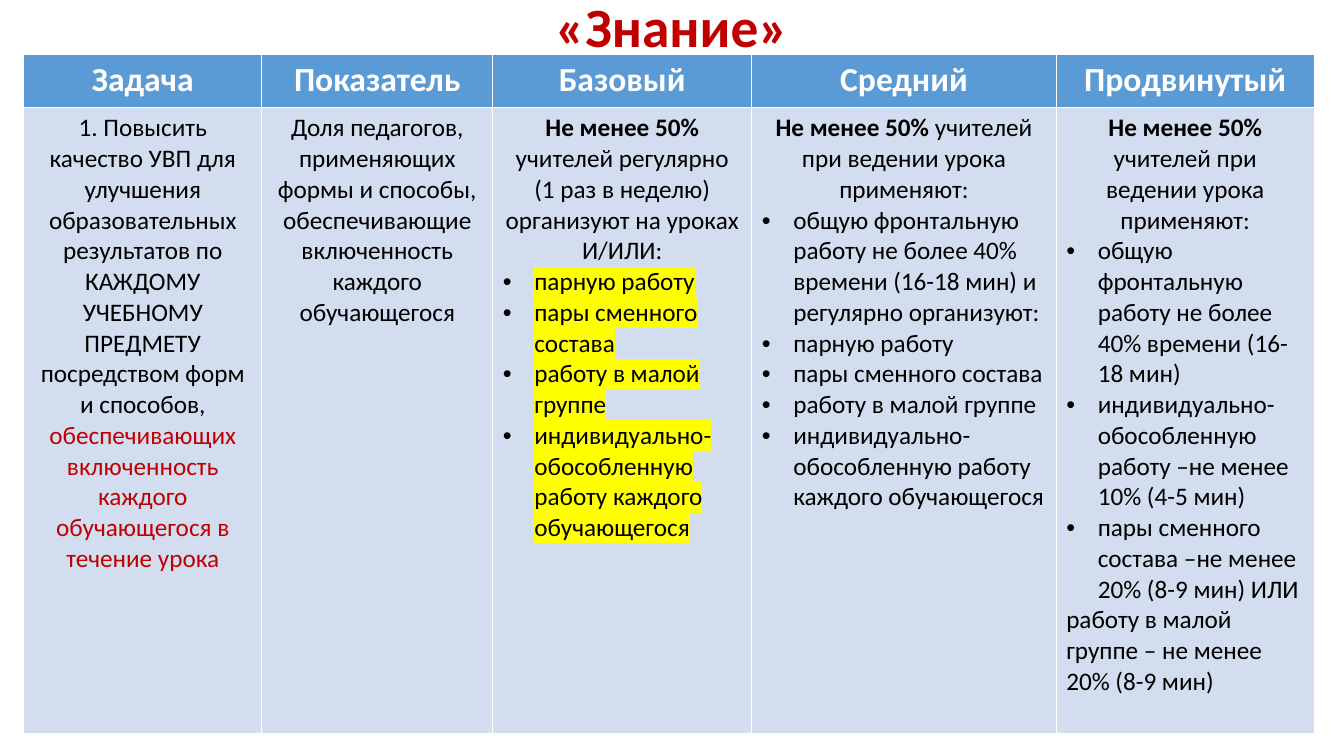
from dataclasses import dataclass

from lxml import etree
from pptx import Presentation
from pptx import util as u
from pptx.dml.color import RGBColor
from pptx.enum import text
from pptx.oxml import ns


@dataclass(frozen=True)
class Theme:
    font: str = "Calibri"
    title_size: float = 39.6
    header_size: float = 24
    body_size: float = 18
    accent: str = "C00000"
    header_text: str = "FFFFFF"
    body_text: str = "000000"
    header_fill: str = "5B9BD5"
    body_fill: str = "D2DEEF"
    marker: str = "FFFF00"
    bullet_indent: float = 22.5


@dataclass(frozen=True)
class Span:
    wording: str
    bold: bool = False
    color: str = ""
    marked: bool = False


@dataclass(frozen=True)
class Line:
    spans: tuple[Span, ...]
    bullet: bool = False
    centred: bool = True


@dataclass(frozen=True)
class Level:
    heading: str
    width: float
    lines: tuple[Line, ...]


THEME = Theme()


def centred(*spans: Span) -> Line:
    return Line(spans)


def bullets(*items: str, marked: bool = False) -> tuple[Line, ...]:
    return tuple(Line((Span(item, marked=marked),), True, False) for item in items)


def share(rest: str) -> Line:
    return centred(Span("Не менее 50% ", bold=True), Span(rest))


FORMS = ("парную работу", "пары сменного состава", "работу в малой группе",
         "индивидуально-обособленную работу каждого обучающегося")
IN_LESSON = share("учителей при ведении урока применяют:")

LEVELS = (
    Level("Задача", 170, (centred(
        Span("1. Повысить качество УВП для улучшения образовательных результатов "
             "по КАЖДОМУ УЧЕБНОМУ ПРЕДМЕТУ посредством форм и способов, "),
        Span("обеспечивающих включенность каждого обучающегося в течение урока",
             color=THEME.accent)),)),
    Level("Показатель", 165, (centred(
        Span("Доля педагогов, применяющих формы и способы, обеспечивающие "
             "включенность каждого обучающегося")),)),
    Level("Базовый", 185, (
        share("учителей регулярно (1 раз в неделю) организуют на уроках"),
        centred(Span("И/ИЛИ:")),
        *bullets(*FORMS, marked=True))),
    Level("Средний", 217.5, (
        IN_LESSON,
        *bullets("общую фронтальную работу не более 40% времени (16-18 мин) "
                 "и регулярно организуют:", *FORMS))),
    Level("Продвинутый", 184.3, (
        IN_LESSON,
        *bullets("общую фронтальную работу не более 40% времени (16-18 мин)",
                 "индивидуально-обособленную работу –не менее 10% (4-5 мин)",
                 "пары сменного состава –не менее 20% (8-9 мин) ИЛИ"),
        Line((Span("работу в малой группе – не менее 20% (8-9 мин)"),), centred=False))),
)


def set_font(font, size: float, color: str, bold: bool | None = None) -> None:
    font.name = THEME.font
    font.size = u.Pt(size)
    font.color.rgb = RGBColor.from_string(color)
    font.bold = bold


def add_bullet(paragraph) -> None:
    properties = paragraph._p.get_or_add_pPr()
    properties.set("marL", str(u.Pt(THEME.bullet_indent)))
    properties.set("indent", str(-u.Pt(THEME.bullet_indent)))
    etree.SubElement(properties, ns.qn("a:buFont")).set("typeface", "Arial")
    etree.SubElement(properties, ns.qn("a:buChar")).set("char", "•")


def add_marker(run) -> None:
    highlight = etree.SubElement(run._r.get_or_add_rPr(), ns.qn("a:highlight"))
    etree.SubElement(highlight, ns.qn("a:srgbClr")).set("val", THEME.marker)


def write_line(paragraph, line: Line, size: float, color: str) -> None:
    paragraph.alignment = text.PP_ALIGN.CENTER if line.centred else text.PP_ALIGN.LEFT
    if line.bullet:
        add_bullet(paragraph)
    set_font(paragraph.font, size, color)
    for span in line.spans:
        run = paragraph.add_run()
        run.text = span.wording
        run.font.bold = span.bold
        if span.color:
            run.font.color.rgb = RGBColor.from_string(span.color)
        if span.marked:
            add_marker(run)


def fill_cell(cell, lines: tuple[Line, ...], fill: str, size: float, color: str) -> None:
    cell.fill.solid()
    cell.fill.fore_color.rgb = RGBColor.from_string(fill)
    frame = cell.text_frame
    for index, line in enumerate(lines):
        paragraph = frame.add_paragraph() if index else frame.paragraphs[0]
        write_line(paragraph, line, size, color)


def add_title(slide, wording: str) -> None:
    frame = slide.shapes.add_textbox(u.Pt(66), u.Pt(5), u.Pt(828), u.Pt(32.4)).text_frame
    frame.word_wrap = True
    frame.vertical_anchor = text.MSO_ANCHOR.MIDDLE
    heading = frame.paragraphs[0]
    heading.line_spacing = 0.9
    write_line(heading, centred(Span(wording, bold=True)), THEME.title_size, THEME.accent)


def add_levels(slide, levels: tuple[Level, ...]) -> None:
    header_height, body_height = 38, 447
    total_width = sum(level.width for level in levels)
    grid = slide.shapes.add_table(2, len(levels), u.Pt(17), u.Pt(39), u.Pt(total_width),
                                  u.Pt(header_height + body_height)).table
    grid.rows[0].height = u.Pt(header_height)
    grid.rows[1].height = u.Pt(body_height)
    for column, level in enumerate(levels):
        grid.columns[column].width = u.Pt(level.width)
        fill_cell(grid.cell(0, column), (centred(Span(level.heading, bold=True)),),
                  THEME.header_fill, THEME.header_size, THEME.header_text)
        fill_cell(grid.cell(1, column), level.lines,
                  THEME.body_fill, THEME.body_size, THEME.body_text)


def main() -> None:
    deck = Presentation()
    deck.slide_width, deck.slide_height = u.Pt(960), u.Pt(540)
    slide = deck.slides.add_slide(deck.slide_layouts[6])
    # Title
    add_title(slide, "«Знание»")
    # Table of levels
    add_levels(slide, LEVELS)
    deck.save("out.pptx")


if __name__ == "__main__":
    main()
